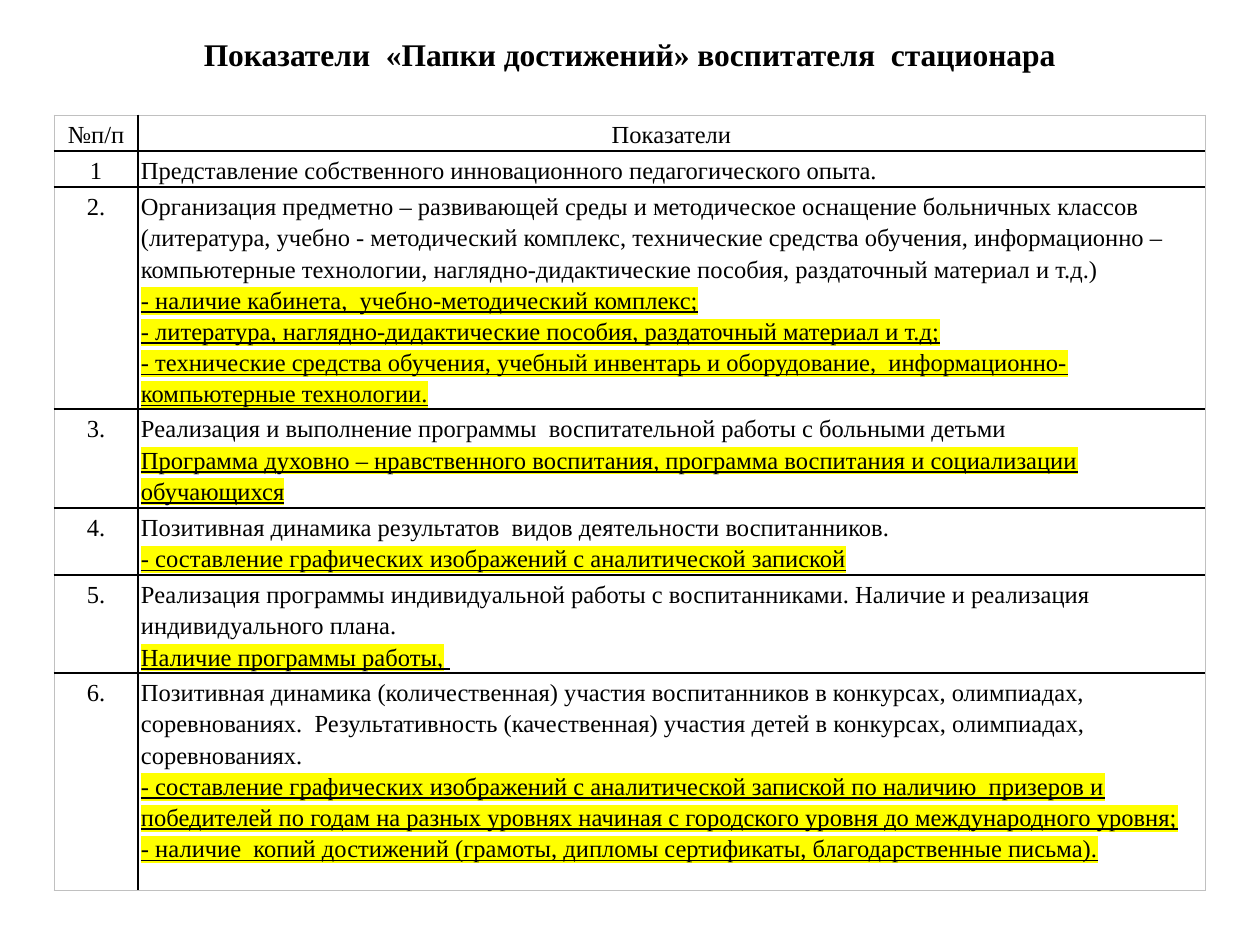
import pptx
import pptx.util
import pptx.dml.color
import pptx.enum.text
import pptx.oxml
import pptx.oxml.ns

SCALE = 914400 / 126
FONT = "Times New Roman"
COLOURS = {"text": "000000", "mark": "FFFF00", "grid": "000000", "frame": "C0C0C0"}
ALIGN = pptx.enum.text.PP_ALIGN

TITLE = "Показатели  «Папки достижений» воспитателя  стационара"
HEADER = ("№п/п", "Показатели")
# number, row height in px, plain paragraph, highlighted paragraphs
INDICATORS = [
    ("1", 36, "Представление собственного инновационного педагогического опыта.", []),
    ("2.", 222,
     "Организация предметно – развивающей среды и методическое оснащение больничных классов "
     "(литература, учебно - методический комплекс, технические средства обучения, информационно – "
     "компьютерные технологии, наглядно-дидактические пособия, раздаточный материал и т.д.)",
     ["- наличие кабинета,  учебно-методический комплекс;",
      "- литература, наглядно-дидактические пособия, раздаточный материал и т.д;",
      "- технические средства обучения, учебный инвентарь и оборудование,  "
      "информационно-компьютерные технологии."]),
    ("3.", 99, "Реализация и выполнение программы  воспитательной работы с больными детьми",
     ["Программа духовно – нравственного воспитания, программа воспитания и социализации обучающихся"]),
    ("4.", 67, "Позитивная динамика результатов  видов деятельности воспитанников.",
     ["- составление графических изображений с аналитической запиской"]),
    ("5.", 98,
     "Реализация программы индивидуальной работы с воспитанниками. Наличие и реализация  "
     "индивидуального плана.",
     ["Наличие программы работы, "]),
    ("6.", 218,
     "Позитивная динамика (количественная) участия воспитанников в конкурсах, олимпиадах, "
     "соревнованиях.  Результативность (качественная) участия детей в конкурсах, олимпиадах, "
     "соревнованиях.",
     ["- составление графических изображений с аналитической запиской по наличию  призеров и "
      "победителей по годам на разных уровнях начиная с городского уровня до международного уровня;",
      "- наличие  копий достижений (грамоты, дипломы сертификаты, благодарственные письма)."]),
]
TABLE_LEFT, TABLE_TOP = 54, 115
COLUMN_WIDTHS = (84, 1067)
HEADER_HEIGHT = 36
SIDE_MARGIN, TOP_MARGIN, BOTTOM_MARGIN = 3, 3, 1
LINE_PITCH = pptx.util.Pt(17.8)


def px(value):
    return pptx.util.Emu(round(value * SCALE))


def add_run(paragraph, text, size, bold=False, underline=False, marked=False):
    run = paragraph.add_run()
    run.text = text
    font = run.font
    font.name, font.size, font.bold, font.underline = FONT, pptx.util.Pt(size), bold, underline
    font.color.rgb = pptx.dml.color.RGBColor.from_string(COLOURS["text"])
    if marked:
        highlight = pptx.oxml.parse_xml(
            f'<a:highlight {pptx.oxml.ns.nsdecls("a")}><a:srgbClr val="{COLOURS["mark"]}"/></a:highlight>')
        run._r.rPr.find(pptx.oxml.ns.qn("a:solidFill")).addnext(highlight)


def set_borders(cell, outer_sides):
    """Draw inner sides as black grid lines and outer sides as a thin grey frame."""
    properties = cell._tc.get_or_add_tcPr()
    for position, side in enumerate("LRTB"):
        colour, width = ("frame", 0.5) if side in outer_sides else ("grid", 1)
        properties.insert(position, pptx.oxml.parse_xml(
            f'<a:ln{side} {pptx.oxml.ns.nsdecls("a")} w="{pptx.util.Pt(width)}"><a:solidFill>'
            f'<a:srgbClr val="{COLOURS[colour]}"/></a:solidFill></a:ln{side}>'))


def fill_cell(cell, paragraphs, alignment):
    """Write (text, marked) pairs, one paragraph each; a trailing space is only underlined."""
    cell.fill.background()
    cell.margin_left = cell.margin_right = px(SIDE_MARGIN)
    cell.margin_top, cell.margin_bottom = px(TOP_MARGIN), px(BOTTOM_MARGIN)
    frame = cell.text_frame
    for index, (text, marked) in enumerate(paragraphs):
        paragraph = frame.add_paragraph() if index else frame.paragraphs[0]
        paragraph.alignment = alignment
        paragraph.line_spacing = LINE_PITCH
        words = text.rstrip()
        add_run(paragraph, words, 14, underline=marked, marked=marked)
        if words != text:
            add_run(paragraph, text[len(words):], 14, underline=marked)


def add_title(slide):
    frame = slide.shapes.add_textbox(px(63), px(28), px(1134), px(52)).text_frame
    frame.word_wrap = True
    frame.vertical_anchor = pptx.enum.text.MSO_ANCHOR.MIDDLE
    frame.paragraphs[0].alignment = ALIGN.CENTER
    add_run(frame.paragraphs[0], TITLE, 18, bold=True)


def add_indicator_table(slide):
    heights = [HEADER_HEIGHT] + [height for _, height, _, _ in INDICATORS]
    table = slide.shapes.add_table(
        len(heights), len(COLUMN_WIDTHS), px(TABLE_LEFT), px(TABLE_TOP),
        px(sum(COLUMN_WIDTHS)), px(sum(heights))).table
    table.first_row = table.horz_banding = False
    for column, width in zip(table.columns, COLUMN_WIDTHS):
        column.width = px(width)
    for row, height in zip(table.rows, heights):
        row.height = px(height)

    for column, text in enumerate(HEADER):
        fill_cell(table.cell(0, column), [(text, False)], ALIGN.CENTER)
    for row, (number, _, description, evidence) in enumerate(INDICATORS, 1):
        fill_cell(table.cell(row, 0), [(number, False)], ALIGN.CENTER)
        fill_cell(table.cell(row, 1),
                  [(description, False)] + [(text, True) for text in evidence], ALIGN.LEFT)

    for row in range(len(heights)):
        vertical = {0: "T", len(heights) - 1: "B"}.get(row, "")
        for column, side in enumerate("LR"):
            set_borders(table.cell(row, column), side + vertical)


def main():
    presentation = pptx.Presentation()
    presentation.slide_width, presentation.slide_height = px(1260), px(945)
    slide = presentation.slides.add_slide(presentation.slide_layouts[6])
    add_title(slide)
    add_indicator_table(slide)
    presentation.save("out.pptx")


if __name__ == "__main__":
    main()
